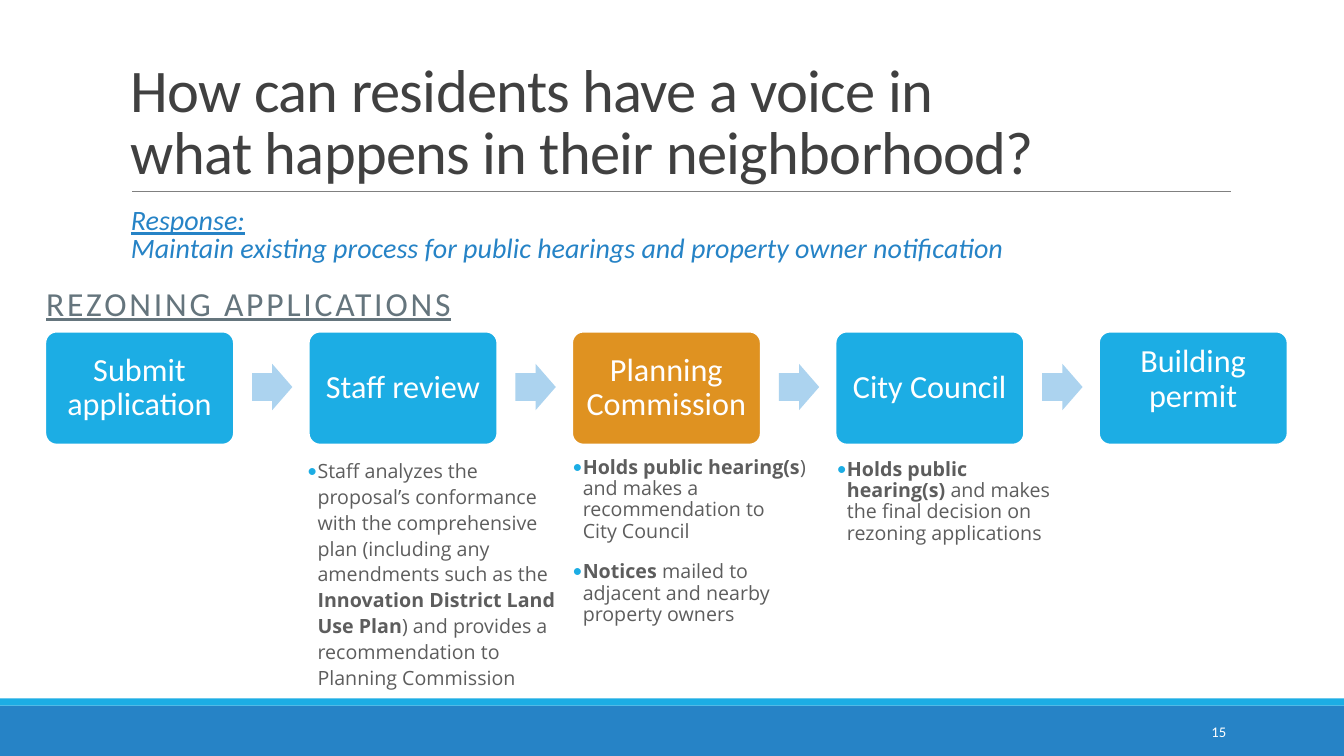
from dataclasses import dataclass
from lxml.etree import SubElement
from pptx import Presentation
from pptx.dml.color import RGBColor
from pptx.enum.shapes import MSO_CONNECTOR, MSO_SHAPE
from pptx.enum.text import MSO_ANCHOR, PP_ALIGN
from pptx.oxml.ns import qn
from pptx.util import Inches, Pt

HUES = {
    "white": "FFFFFF", "sky": "1CADE4", "blue": "2683C6", "pale": "ACD3EF",
    "gold": "DF9221", "rule": "808080", "dark": "404040", "body": "5D5D5D",
    "slate": "65757D",
}
BREAK = "\n"


@dataclass
class Bit:
    text: str
    bold: bool = False
    line: bool = False


@dataclass
class Style:
    size: float
    hue: str
    font: str = "Calibri"
    space: float = 1.0
    align: PP_ALIGN = PP_ALIGN.LEFT
    slant: bool = False
    track: int = 0
    dot: bool = False


@dataclass
class Step:
    label: str
    hue: str = "sky"
    anchor: MSO_ANCHOR = MSO_ANCHOR.MIDDLE


@dataclass
class Note:
    left: float
    top: float
    width: float
    space: float
    paras: list[list[Bit]]


STEPS = [
    Step("Submit application"),
    Step("Staff review"),
    Step("Planning Commission", "gold"),
    Step("City Council"),
    Step("Building permit", anchor=MSO_ANCHOR.TOP),
]

NOTES = [
    Note(3.05, 4.48, 2.5, 1.1, [[
        Bit("Staff analyzes the proposal’s conformance with the comprehensive "
            "plan (including any amendments such as the "),
        Bit("Innovation District Land Use Plan", bold=True),
        Bit(") and provides a recommendation to Planning Commission"),
    ]]),
    Note(5.68, 4.49, 2.32, 0.9, [
        [Bit("Holds public hearing(s", bold=True),
         Bit(") and makes a recommendation to"), Bit(BREAK), Bit("City Council")],
        [Bit("Notices ", bold=True),
         Bit("mailed to adjacent and nearby property owners")],
    ]),
    Note(8.3, 4.51, 2.32, 0.9, [[
        Bit("Holds public hearing(s) ", bold=True),
        Bit("and makes the final decision on rezoning applications"),
    ]]),
]


def tint(name: str) -> RGBColor:
    return RGBColor.from_string(HUES[name])


def add_dot(para) -> None:
    props = para._p.get_or_add_pPr()
    props.set("marL", str(Inches(0.1)))
    props.set("indent", str(Inches(-0.1)))
    hue = SubElement(props, qn("a:buClr"))
    SubElement(hue, qn("a:srgbClr"), val=HUES["sky"])
    SubElement(props, qn("a:buFont"), typeface="Calibri")
    SubElement(props, qn("a:buChar"), char="•")


def write(frame, paras: list[list[Bit]], style: Style) -> None:
    frame.word_wrap = True
    for row, bits in enumerate(paras):
        para = frame.add_paragraph() if row else frame.paragraphs[0]
        if style.dot:
            add_dot(para)
            para.space_before = Pt(12 if row else 0)
            para.space_after = Pt(2)
        para.alignment = style.align
        para.line_spacing = style.space
        for bit in bits:
            if bit.text == BREAK:
                para.add_line_break()
                continue
            run = para.add_run()
            run.text = bit.text
            font = run.font
            font.name, font.size = style.font, Pt(style.size)
            font.bold, font.italic, font.underline = bit.bold, style.slant, bit.line
            font.color.rgb = tint(style.hue)
            if style.track:
                run._r.get_or_add_rPr().set("spc", str(style.track))


def add_text(slide, left: float, top: float, width: float, height: float,
             paras: list[list[Bit]], style: Style,
             anchor: MSO_ANCHOR = MSO_ANCHOR.TOP):
    box = slide.shapes.add_textbox(*map(Inches, (left, top, width, height)))
    frame = box.text_frame
    frame.vertical_anchor = anchor
    write(frame, paras, style)
    return frame


def add_form(slide, kind: MSO_SHAPE, left: float, top: float, width: float,
             height: float, hue: str):
    form = slide.shapes.add_shape(kind, *map(Inches, (left, top, width, height)))
    form.shadow.inherit = False
    form.fill.solid()
    form.fill.fore_color.rgb = tint(hue)
    form.line.fill.background()
    return form


def add_rule(slide, left: float, right: float, top: float) -> None:
    rule = slide.shapes.add_connector(
        MSO_CONNECTOR.STRAIGHT, *map(Inches, (left, top, right, top)))
    rule.line.color.rgb = tint("rule")
    rule.line.width = Pt(0.5)
    SubElement(rule._element.spPr, qn("a:effectLst"))


def add_steps(slide) -> None:
    style = Style(23, "white", space=0.9, align=PP_ALIGN.CENTER)
    start, pitch = 0.45, 2.6125
    for col, step in enumerate(STEPS):
        left = start + col * pitch
        card = add_form(slide, MSO_SHAPE.ROUNDED_RECTANGLE,
                        left, 3.29, 1.87, 1.12, step.hue)
        card.adjustments[0] = 0.1
        card.line.color.rgb = tint("white")
        card.line.width = Pt(1.25)
        frame = card.text_frame
        frame.margin_left = frame.margin_right = Inches(0.08)
        frame.margin_top = frame.margin_bottom = Inches(0.1)
        frame.vertical_anchor = step.anchor
        write(frame, [[Bit(step.label)]], style)
        if col < len(STEPS) - 1:
            arrow = add_form(slide, MSO_SHAPE.RIGHT_ARROW,
                             left + 2.05, 3.61, 0.4, 0.46, "pale")
            arrow.adjustments[0] = 0.6
            arrow.adjustments[1] = 0.5


def add_notes(slide) -> None:
    for note in NOTES:
        style = Style(14, "body", "Open Sans", note.space, dot=True)
        frame = add_text(slide, note.left, note.top, note.width, 2.45,
                         note.paras, style)
        frame.margin_left = frame.margin_right = 0


def main() -> None:
    deck = Presentation()
    deck.slide_width, deck.slide_height = Inches(13.33), Inches(7.5)
    slide = deck.slides.add_slide(deck.slide_layouts[6])
    add_form(slide, MSO_SHAPE.RECTANGLE, 0, 7, 13.33, 0.5, "blue")
    add_form(slide, MSO_SHAPE.RECTANGLE, 0, 6.93, 13.33, 0.07, "sky")
    add_rule(slide, 1.31, 12.21, 1.9)
    add_text(slide, 10.83, 7.06, 1.43, 0.4, [[Bit("15")]],
             Style(10.5, "white", align=PP_ALIGN.RIGHT), MSO_ANCHOR.MIDDLE)
    add_text(slide, 1.2, 0.31, 9.29, 1.59,
             [[Bit("How can residents have a voice in what happens "
                   "in their neighborhood?")]],
             Style(43.2, "dark", space=0.85, track=-50), MSO_ANCHOR.BOTTOM)
    add_steps(slide)
    add_notes(slide)
    add_text(slide, 0.36, 2.8, 4.46, 0.6,
             [[Bit("REZONING APPLICATIONS", line=True)]],
             Style(24, "slate", space=0.9, track=200))
    reply = add_text(slide, 1.2, 1.96, 11.06, 0.75,
                     [[Bit("Response:", line=True)],
                      [Bit("Maintain existing process for public hearings "
                           "and property owner notification")]],
                     Style(20, "blue", slant=True))
    reply.paragraphs[1].line_spacing = 0.85
    deck.save("out.pptx")


if __name__ == "__main__":
    main()
